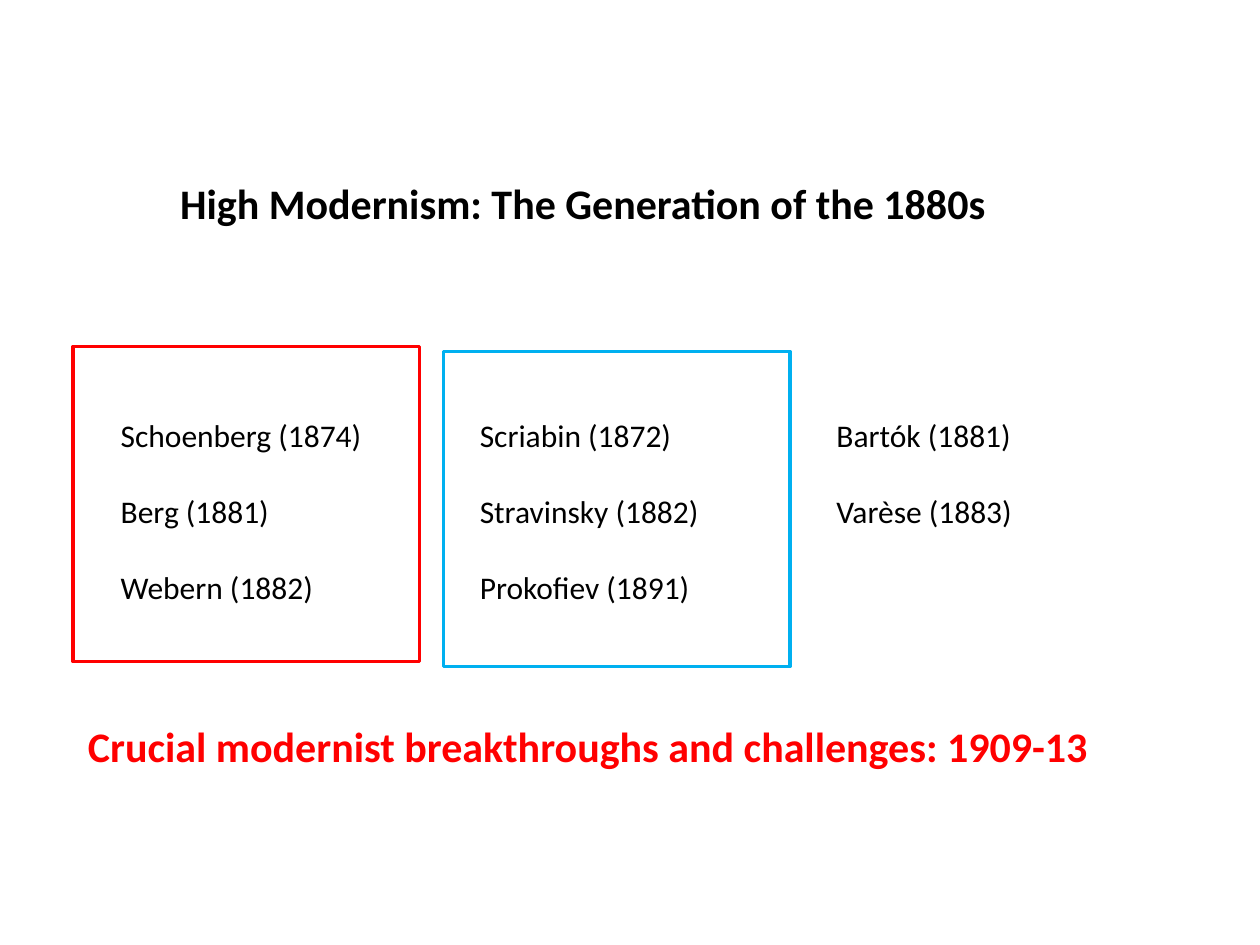
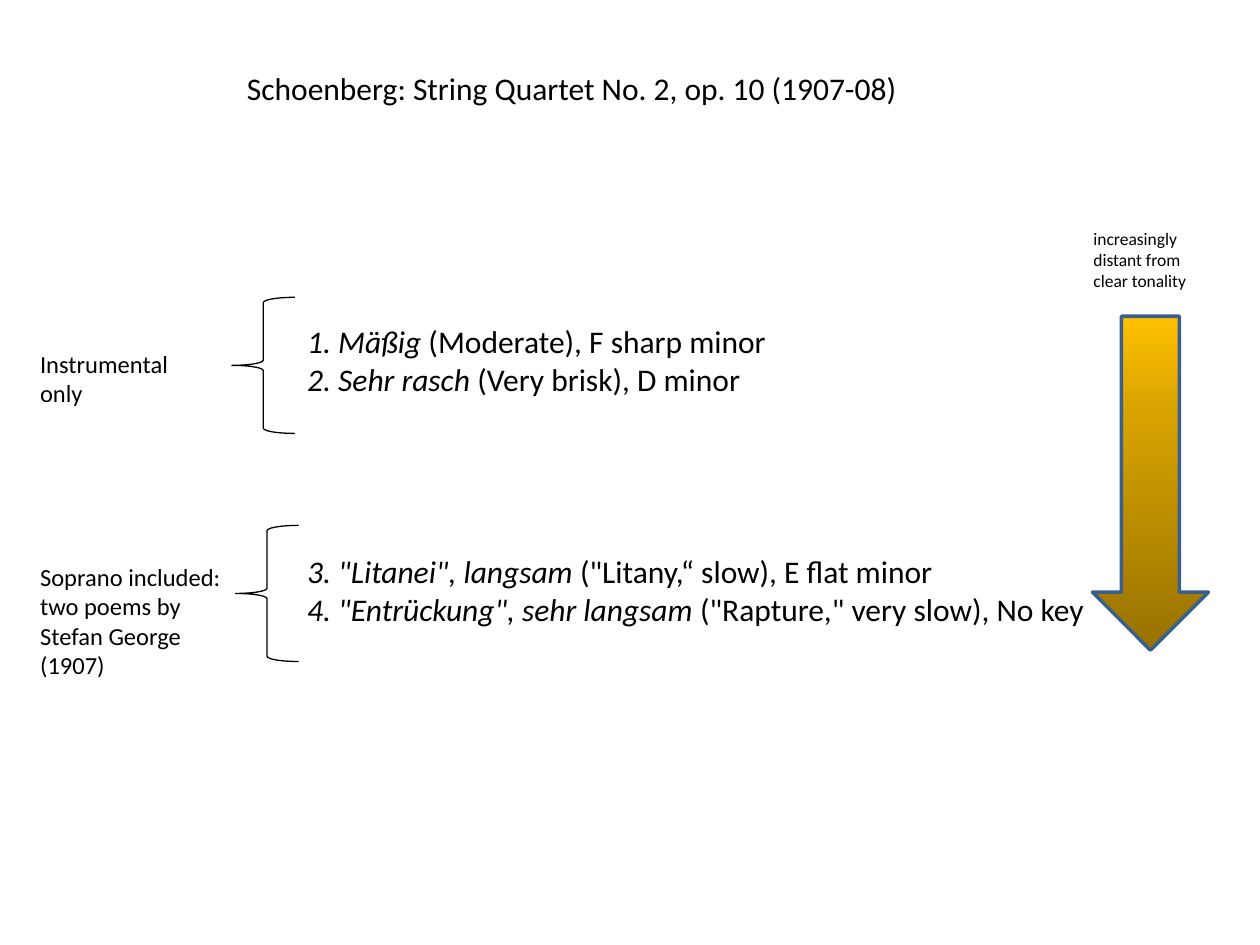
from copy import deepcopy

from pptx import Presentation
from pptx.dml.color import RGBColor
from pptx.enum.shapes import MSO_SHAPE as Shape
from pptx.enum.text import MSO_ANCHOR as Anchor, MSO_AUTO_SIZE as AutoSize, PP_ALIGN as Align
from pptx.oxml.ns import qn
from pptx.util import Inches, Pt

BLACK = RGBColor(0x00, 0x00, 0x00)
RED = RGBColor(0xFF, 0x00, 0x00)
SKY = RGBColor(0x00, 0xB0, 0xF0)
ARROW_EDGE = RGBColor(0x3A, 0x5F, 0x8C)
ARROW_STOPS = [
    (0, RGBColor(0x97, 0x72, 0x00)),
    (0.7, RGBColor(0xD7, 0xA2, 0x00)),
    (1, RGBColor(0xFF, 0xC0, 0x00)),
]
FONT = "Calibri"
TITLE_ONLY = 5
LINE_HEIGHT = 22  # points, one line of 18 pt text


def write_text(holder, paragraphs, size=18, color=BLACK, bold=False, gap=0):
    """Fill a shape; a paragraph is a string or an (italic, upright) pair."""
    frame = holder.text_frame
    frame.word_wrap = True
    frame.auto_size = AutoSize.NONE
    frame.vertical_anchor = Anchor.TOP
    for index, content in enumerate(paragraphs):
        paragraph = frame.add_paragraph() if index else frame.paragraphs[0]
        paragraph.alignment = Align.LEFT
        paragraph.space_before = Pt(gap if index else 0)
        italic, upright = ("", content) if isinstance(content, str) else content
        for words, slanted in ((italic, True), (upright, False)):
            if words:
                run = paragraph.add_run()
                run.text = words
                font = run.font
                font.name, font.size, font.bold = FONT, Pt(size), bold
                font.italic = slanted
                font.color.rgb = color
    return frame


def add_text(slide, box, paragraphs, **style):
    holder = slide.shapes.add_textbox(*map(Inches, box))
    return write_text(holder, paragraphs, **style)


def add_titled_slide(deck, title, box, **style):
    slide = deck.slides.add_slide(deck.slide_layouts[TITLE_ONLY])
    heading = slide.shapes.title
    heading.left, heading.top, heading.width, heading.height = map(Inches, box)
    write_text(heading, [title], **style)
    return slide


def add_outline(slide, kind, box, color, weight):
    outline = slide.shapes.add_shape(kind, *map(Inches, box))
    outline.shadow.inherit = False
    outline.fill.background()
    outline.line.color.rgb = color
    outline.line.width = Pt(weight)
    return outline


def add_composers(slide, left, top, width, composers):
    height = 0.4 + 0.61 * (len(composers) - 1)
    add_text(slide, (left, top, width, height), composers, gap=LINE_HEIGHT)


def add_movement_group(slide, brace_box, label_box, label):
    add_outline(slide, Shape.LEFT_BRACE, brace_box, BLACK, 0.75)
    add_text(slide, label_box, label, size=14)


def add_tonality_arrow(slide, left, top):
    """Draw the caption with the gradient arrow below it."""
    arrow = add_outline(slide, Shape.DOWN_ARROW, (left + 0.09, top + 0.75, 0.92, 2.65),
                        ARROW_EDGE, 2)
    arrow.fill.gradient()
    arrow.fill.gradient_angle = 90
    stop_list = arrow.element.spPr.find(".//" + qn("a:gsLst"))
    stop_list.append(deepcopy(stop_list[-1]))
    for stop, (position, color) in zip(arrow.fill.gradient_stops, ARROW_STOPS):
        stop.position = position
        stop.color.rgb = color
    add_text(slide, (left, top, 1.08, 0.61),
             ["increasingly", "distant from", "clear tonality"], size=10)


def build_generation_slide(deck):
    slide = add_titled_slide(deck, "High Modernism: The Generation of the 1880s",
                             (1.33, 1.36, 6.75, 0.5), size=24, bold=True)
    groups = [
        (0.86, 2.17, ["Schoenberg (1874)", "Berg (1881)", "Webern (1882)"]),
        (3.71, 2.37, ["Scriabin (1872)", "Stravinsky (1882)", "Prokofiev (1891)"]),
        (6.54, 2.83, ["Bartók (1881)", "Varèse (1883)"]),
    ]
    for left, width, composers in groups:
        add_composers(slide, left, 3.25, width, composers)
    add_text(slide, (0.6, 5.67, 8.34, 0.5),
             ["Crucial modernist breakthroughs and challenges: 1909-13"],
             size=24, color=RED, bold=True)
    for left, top, color in ((0.58, 2.75, RED), (3.52, 2.79, SKY)):
        add_outline(slide, Shape.RECTANGLE, (left, top, 2.75, 2.5), color, 2)


def build_quartet_slide(deck):
    slide = add_titled_slide(deck, "Schoenberg: String Quartet No. 2, op. 10 (1907-08)",
                             (1.86, 0.5, 5.51, 0.4))
    movements = add_text(slide, (2.34, 2.51, 6.83, 2.83), [
        ("1. Mäßig", " (Moderate), F sharp minor"),
        ("2. Sehr rasch", " (Very brisk), D minor"),
        ('3. "Litanei", langsam', ' ("Litany,“ slow), E flat minor'),
        ('4. "Entrückung", sehr langsam', ' ("Rapture," very slow), No key'),
    ])
    movements.paragraphs[2].space_before = Pt(4 * LINE_HEIGHT)
    add_movement_group(slide, (1.84, 2.36, 0.5, 1.08), (0.22, 2.72, 1.37, 0.57),
                       ["Instrumental", "only"])
    add_movement_group(slide, (1.87, 4.17, 0.5, 1.08), (0.22, 4.41, 1.64, 1.04),
                       ["Soprano included: two poems by Stefan George (1907)"])
    add_tonality_arrow(slide, 8.58, 1.76)


def main():
    deck = Presentation()
    deck.slide_width, deck.slide_height = Inches(10), Inches(7.5)
    build_generation_slide(deck)
    build_quartet_slide(deck)
    deck.save("out.pptx")


if __name__ == "__main__":
    main()
